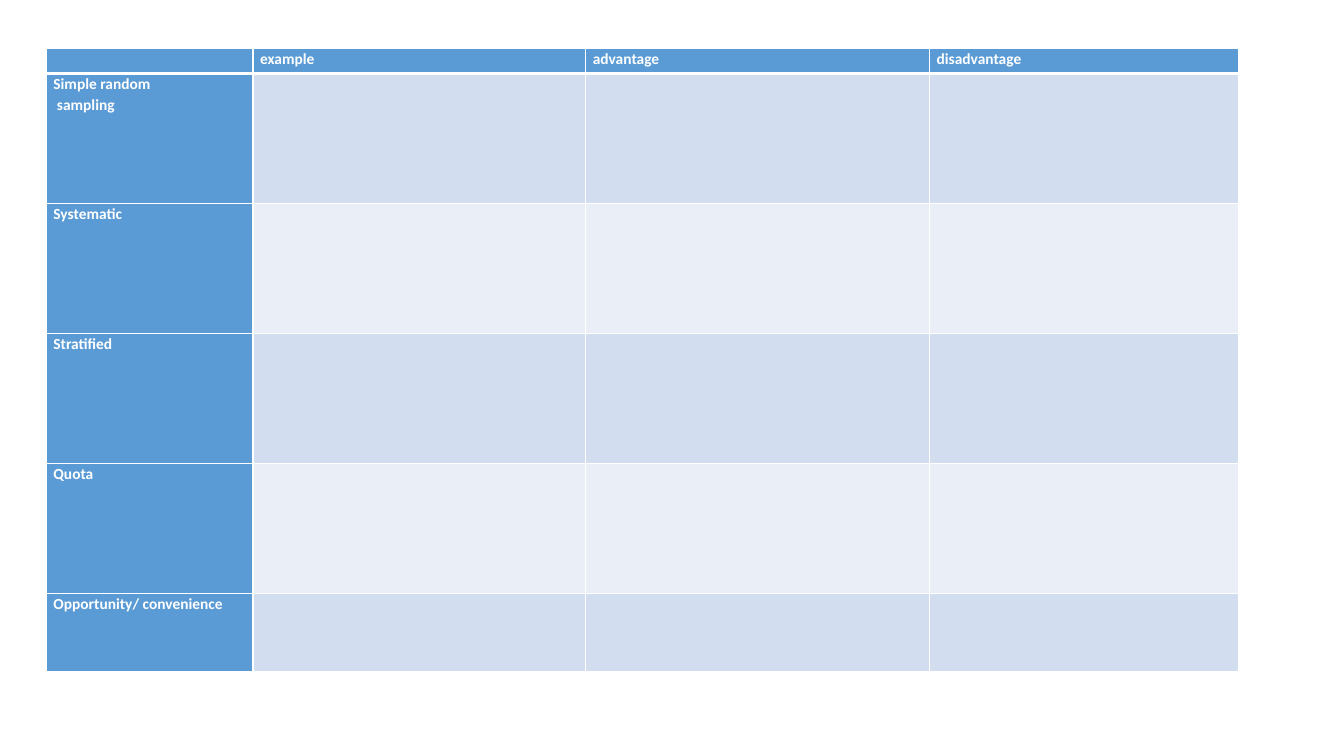
from lxml import etree
from pptx import Presentation
from pptx.dml.color import RGBColor
from pptx.oxml.ns import qn
from pptx.util import Inches, Pt

BLUE, WHITE = "5B9BD5", "FFFFFF"
BANDS = ["EAEFF7", "D2DEEF"]  # even rows, odd rows
COLUMN_WIDTHS = [2.05, 3.3, 3.41, 3.07]
ROW_HEIGHTS = [0.25, 1.29, 1.29, 1.29, 1.29, 0.77]
HEADINGS = ["", "example", "advantage", "disadvantage"]
METHODS = [
    ["Simple random", " sampling"],
    ["Systematic"],
    ["Stratified"],
    ["Quota"],
    ["Opportunity/ convenience"],
]


def color(hex_code):
    return RGBColor.from_string(hex_code)


def add_border(cell, side, points):
    line = etree.SubElement(cell._tc.get_or_add_tcPr(), qn(f"a:ln{side}"), w=str(Pt(points)))
    fill = etree.SubElement(line, qn("a:solidFill"))
    etree.SubElement(fill, qn("a:srgbClr"), val=WHITE)


prs = Presentation()
prs.slide_width, prs.slide_height = Inches(13.33), Inches(7.5)
slide = prs.slides.add_slide(prs.slide_layouts[6])

# Table grid
sampling = slide.shapes.add_table(
    len(ROW_HEIGHTS), len(COLUMN_WIDTHS),
    Inches(0.46), Inches(0.48), Inches(11.84), Inches(6.19)).table
sampling.first_col = True
for column, width in zip(sampling.columns, COLUMN_WIDTHS):
    column.width = Inches(width)
for row, height in zip(sampling.rows, ROW_HEIGHTS):
    row.height = Inches(height)

# Headings across the top, sampling methods down the side, blank answer cells
for r in range(len(ROW_HEIGHTS)):
    for c in range(len(COLUMN_WIDTHS)):
        cell = sampling.cell(r, c)
        cell.margin_left = cell.margin_right = Inches(0.07)
        cell.margin_top = cell.margin_bottom = 0

        # Borders, with a thick rule below the headings
        add_border(cell, "L", 1)
        add_border(cell, "R", 1)
        add_border(cell, "T", 3 if r == 1 else 1)
        add_border(cell, "B", 3 if r == 0 else 1)

        cell.fill.solid()
        cell.fill.fore_color.rgb = color(BLUE if r == 0 or c == 0 else BANDS[r % 2])

        if r == 0:
            lines = [HEADINGS[c]]
        else:
            lines = METHODS[r - 1] if c == 0 else [""]
        for i, text in enumerate(lines):
            paragraph = cell.text_frame.paragraphs[0] if i == 0 else cell.text_frame.add_paragraph()
            paragraph.line_spacing = 1.07
            if text:
                run = paragraph.add_run()
                run.text = text
                run.font.name = "Calibri"
                run.font.size = Pt(11)
                run.font.bold = True
                run.font.color.rgb = color(WHITE)
            else:
                # Keeps blank cells from stretching their row
                etree.SubElement(paragraph._p, qn("a:endParaRPr"), sz="1100")

prs.save("out.pptx")
